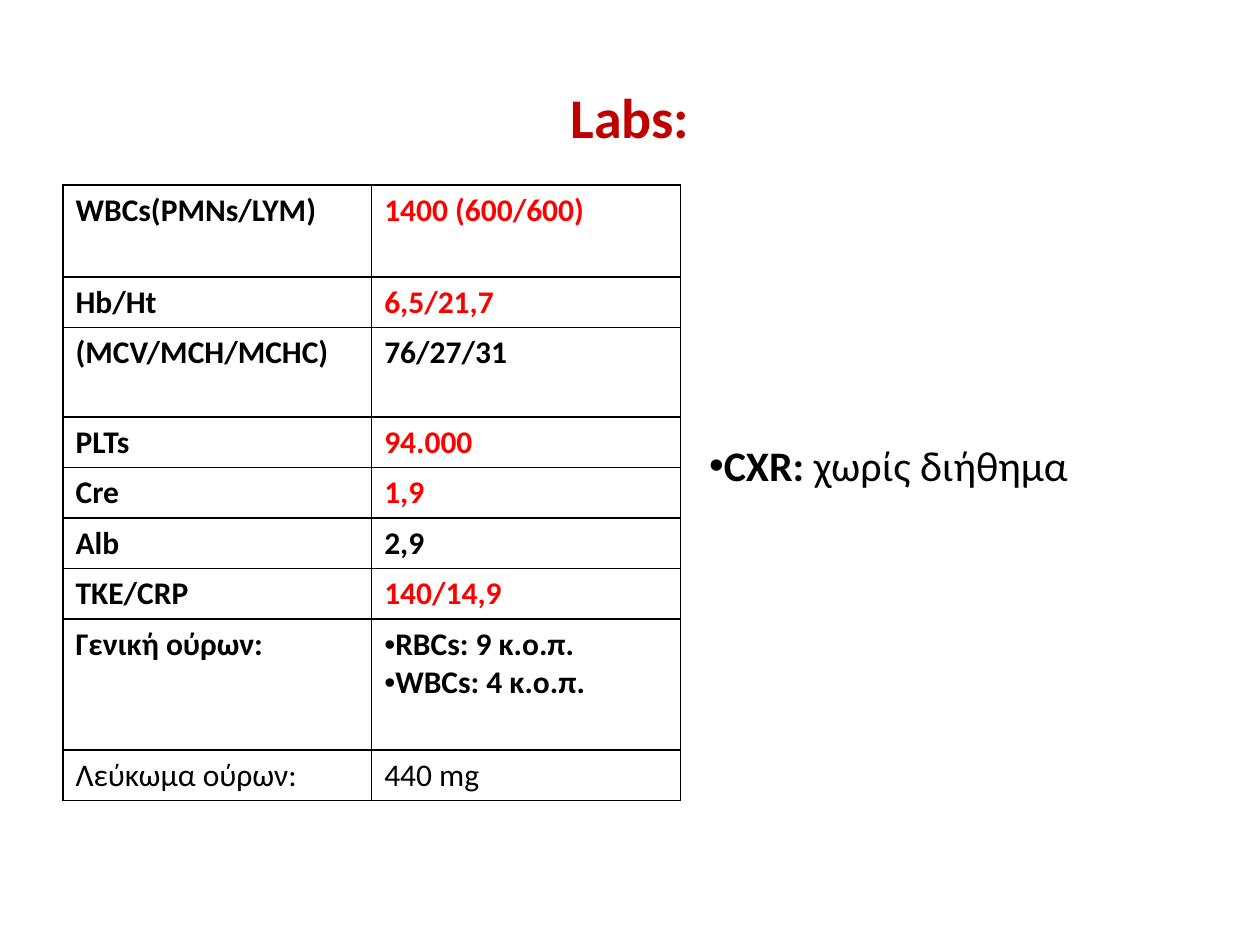
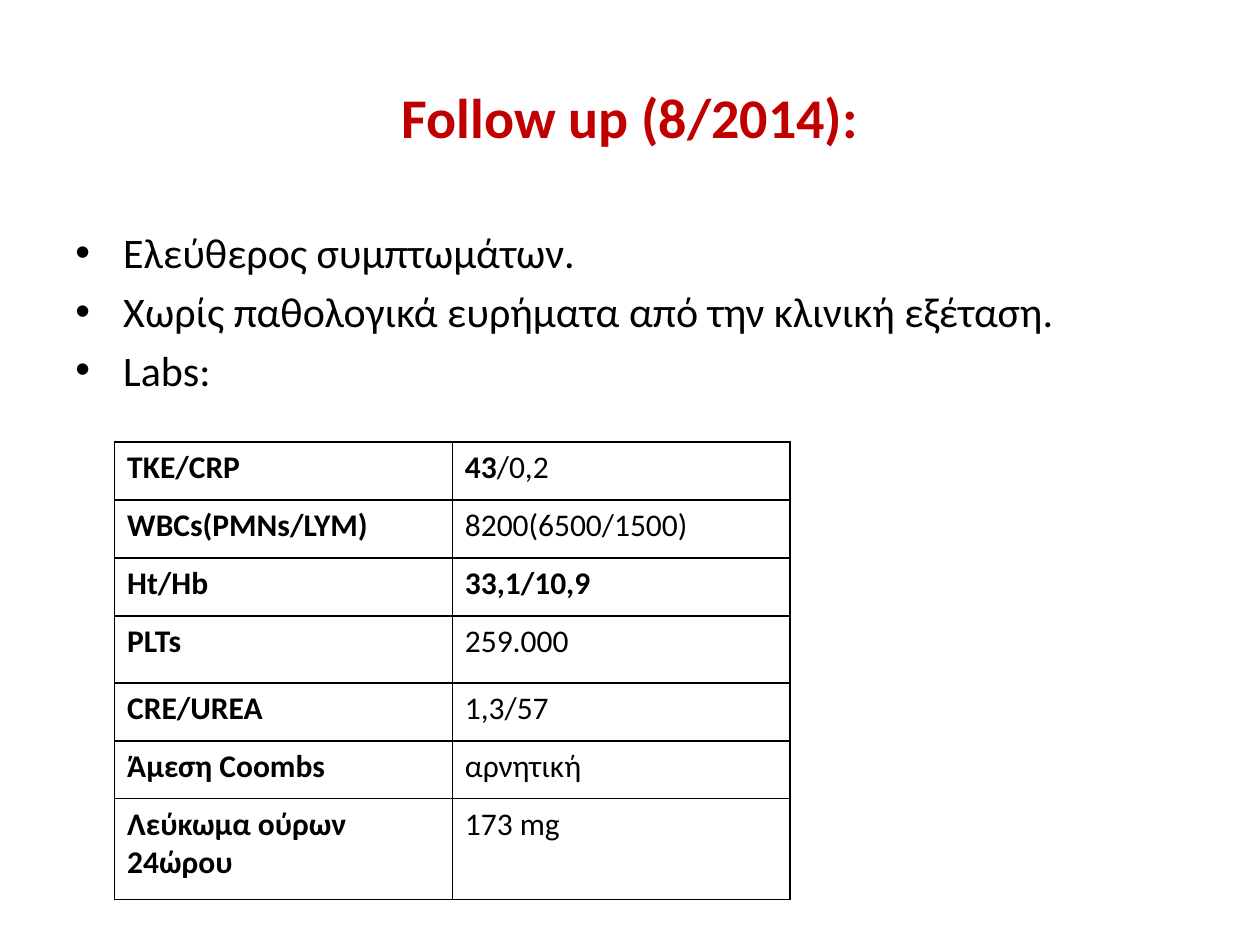
from lxml.etree import SubElement
from pptx import Presentation
from pptx.dml.color import RGBColor
from pptx.enum.text import MSO_ANCHOR as Anchor, PP_ALIGN as Align
from pptx.oxml import parse_xml
from pptx.oxml.ns import nsdecls, qn
from pptx.util import Inches, Pt

TITLE_RED = RGBColor(0xC0, 0x00, 0x00)
ALERT_RED = RGBColor(0xFF, 0x00, 0x00)
BLACK = RGBColor(0x00, 0x00, 0x00)
FONT = "Calibri"

TITLE = {"size": Pt(32), "bold": True, "color": TITLE_RED}
BODY = {"size": Pt(24), "bold": False, "color": BLACK}
BODY_BOLD = {**BODY, "bold": True}
PLAIN = {"size": Pt(18), "bold": False, "color": BLACK}
BOLD = {**PLAIN, "bold": True}
ALERT = {**BOLD, "color": ALERT_RED}

LAB_ROWS = [
    (0.73, ("WBCs(PMNs/LYM)", BOLD), [("1400 (600/600)", ALERT)]),
    (0.4, ("Hb/Ht", BOLD), [("6,5/21,7", ALERT)]),
    (0.71, ("(MCV/MCH/MCHC)", BOLD), [("76/27/31", BOLD)]),
    (0.4, ("PLTs", BOLD), [("94.000", ALERT)]),
    (0.4, ("Cre", BOLD), [("1,9", ALERT)]),
    (0.4, ("Alb", BOLD), [("2,9", BOLD)]),
    (0.4, ("TKE/CRP", BOLD), [("140/14,9", ALERT)]),
    (1.04, ("Γενική ούρων:", BOLD), []),
    (0.4, ("Λεύκωμα ούρων:", PLAIN), [("440 mg", PLAIN)]),
]
URINE_ROW = 7
URINE_FINDINGS = ["RBCs: 9 κ.ο.π.", "WBCs: 4 κ.ο.π."]

FOLLOW_UP_POINTS = [
    "Ελεύθερος συμπτωμάτων.",
    "Χωρίς παθολογικά ευρήματα από την κλινική εξέταση.",
    "Labs:",
]
FOLLOW_UP_ROWS = [
    (0.46, ("ΤΚΕ/CRP", BOLD), [("43", BOLD), ("/0,2", PLAIN)]),
    (0.46, ("WBCs(PMNs/LYM)", BOLD), [("8200(6500/1500)", PLAIN)]),
    (0.46, ("Ht/Hb", BOLD), [("33,1/10,9", BOLD)]),
    (0.53, ("PLTs", BOLD), [("259.000", PLAIN)]),
    (0.46, ("CRE/UREA", BOLD), [("1,3/57", PLAIN)]),
    (0.46, ("Άμεση Coombs", BOLD), [("αρνητική", PLAIN)]),
    (0.8, ("Λεύκωμα ούρων 24ώρου", BOLD), [("173 mg", PLAIN)]),
]


def write_runs(paragraph, runs):
    for text, text_format in runs:
        run = paragraph.add_run()
        run.text = text
        run.font.name = FONT
        for name, value in text_format.items():
            if name == "color":
                run.font.color.rgb = value
            else:
                setattr(run.font, name, value)


def set_bullet(paragraph, indent=0):
    properties = paragraph._p.get_or_add_pPr()
    properties.set("marL", str(Inches(indent)))
    properties.set("indent", str(-Inches(indent)))
    SubElement(properties, qn("a:buFont")).set("typeface", "Arial")
    SubElement(properties, qn("a:buChar")).set("char", "•")


def write_bullets(frame, items, indent=0, space_before=0):
    for index, runs in enumerate(items):
        paragraph = frame.add_paragraph() if index else frame.paragraphs[0]
        paragraph.space_before = Pt(space_before)
        set_bullet(paragraph, indent)
        write_runs(paragraph, runs)


def add_text_frame(slide, left, top, width, height):
    box = slide.shapes.add_textbox(*map(Inches, (left, top, width, height)))
    box.text_frame.word_wrap = True
    return box.text_frame


def add_titled_slide(presentation, title):
    slide = presentation.slides.add_slide(presentation.slide_layouts[6])
    frame = add_text_frame(slide, 0.5, 0.3, 9, 1.25)
    frame.vertical_anchor = Anchor.MIDDLE
    frame.paragraphs[0].alignment = Align.CENTER
    write_runs(frame.paragraphs[0], [(title, TITLE)])
    return slide


def style_cell(cell):
    cell.fill.background()
    properties = cell._tc.get_or_add_tcPr()
    for index, side in enumerate("LRTB"):
        border = parse_xml(
            f'<a:ln{side} {nsdecls("a")} w="{Pt(1)}"><a:solidFill>'
            f'<a:srgbClr val="{BLACK}"/></a:solidFill></a:ln{side}>'
        )
        properties.insert(index, border)


def add_results_table(slide, left, top, column_width, rows):
    height = sum(row[0] for row in rows)
    frame = slide.shapes.add_table(
        len(rows), 2, *map(Inches, (left, top, 2 * column_width, height))
    )
    table = frame.table
    table.first_row = table.horz_banding = False
    for column in table.columns:
        column.width = Inches(column_width)
    for index, (row_height, label, result) in enumerate(rows):
        table.rows[index].height = Inches(row_height)
        for cell, runs in zip(table.rows[index].cells, ([label], result)):
            style_cell(cell)
            write_runs(cell.text_frame.paragraphs[0], runs)
    return table


def add_labs_slide(presentation):
    slide = add_titled_slide(presentation, "Labs:")
    table = add_results_table(slide, 0.5, 1.47, 2.45, LAB_ROWS)
    findings = [[(text, BOLD)] for text in URINE_FINDINGS]
    write_bullets(table.cell(URINE_ROW, 1).text_frame, findings)
    xray = add_text_frame(slide, 5.53, 3.44, 4.47, 0.5)
    write_bullets(xray, [[("CXR: ", BODY_BOLD), ("χωρίς διήθημα", BODY)]])


def add_follow_up_slide(presentation):
    slide = add_titled_slide(presentation, "Follow up (8/2014):")
    body = add_text_frame(slide, 0.5, 1.75, 9, 4.95)
    points = [[(text, BODY)] for text in FOLLOW_UP_POINTS]
    write_bullets(body, points, indent=0.38, space_before=4.8)
    add_results_table(slide, 0.91, 3.51, 2.68, FOLLOW_UP_ROWS)


def main():
    presentation = Presentation()
    presentation.slide_width = Inches(10)
    presentation.slide_height = Inches(7.5)
    add_labs_slide(presentation)
    add_follow_up_slide(presentation)
    presentation.save("out.pptx")


if __name__ == "__main__":
    main()
